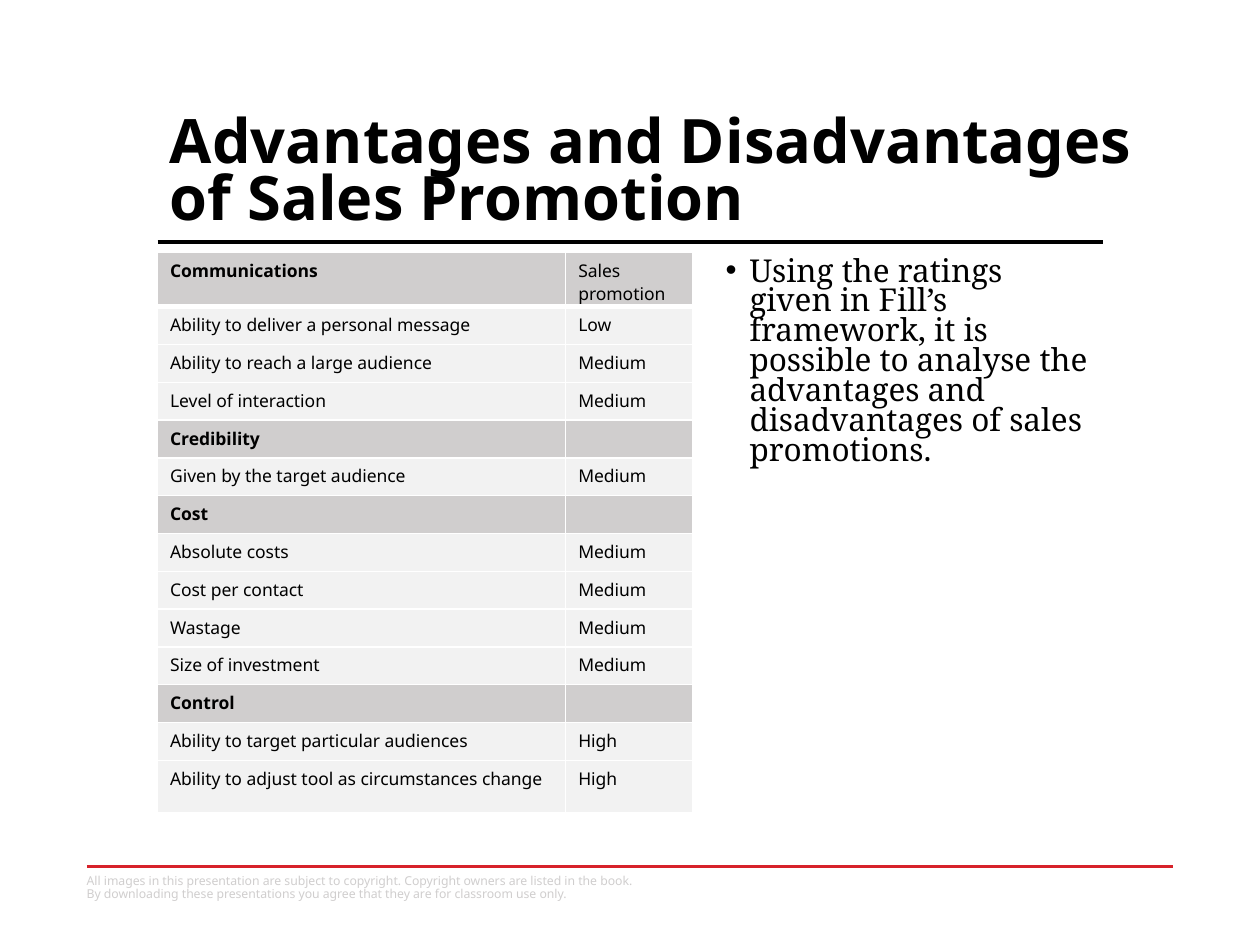
"""Build the slide on advantages and disadvantages of sales promotion."""
from dataclasses import dataclass

from lxml import etree
from pptx import Presentation
from pptx.dml.color import RGBColor
from pptx.enum.shapes import MSO_CONNECTOR
from pptx.enum.text import MSO_ANCHOR
from pptx.oxml.ns import qn
from pptx.util import Inches, Pt

STRAIGHT = MSO_CONNECTOR.STRAIGHT
TOP = MSO_ANCHOR.TOP
BOTTOM = MSO_ANCHOR.BOTTOM


@dataclass(frozen=True)
class Theme:
    sans: str = "Noto Sans"
    serif: str = "Noto Serif"
    ink: str = "000000"
    red: str = "D7222A"
    gray: str = "D0CECE"
    pale: str = "F2F2F2"
    white: str = "FFFFFF"
    title: float = 35
    body: float = 18
    cell: float = 10
    note: float = 7


@dataclass(frozen=True)
class Rule:
    left: float
    right: float
    top: float
    color: str
    width: float


@dataclass(frozen=True)
class Block:
    text: str
    box: tuple[float, float, float, float]
    face: str
    size: float
    color: str
    bold: bool = False
    anchor: MSO_ANCHOR = TOP
    pitch: float = 1.0
    bullet: str = ""


@dataclass(frozen=True)
class Row:
    label: str
    rate: str = ""
    head: bool = False
    height: float = 0.3


THEME = Theme()
RULES = (
    Rule(0.69, 9.31, 6.88, THEME.red, 1.75),
    Rule(1.25, 8.75, 1.92, THEME.ink, 2),
)
BODY = Block(
    "Using the ratings given in Fill’s framework, it is possible to analyse "
    "the advantages and disadvantages of sales promotions.",
    (5.66, 2, 3.09, 4.76), THEME.serif, THEME.body, THEME.ink,
    pitch=0.79, bullet="•")
TITLE = Block(
    "Advantages and Disadvantages of Sales Promotion",
    (1.25, 0.43, 7.88, 1.46), THEME.sans, THEME.title, THEME.ink,
    bold=True, anchor=BOTTOM, pitch=0.78)
NOTE = Block(
    "All images in this presentation are subject to copyright. "
    "Copyright owners are listed in the book.\v"
    "By downloading these presentations you agree that they are "
    "for classroom use only.",
    (0.59, 6.9, 5, 0.34), THEME.sans, THEME.note, THEME.gray, pitch=0.85)
SPOT = (1.25, 2, 4.25, 4.47)
COLS = (3.24, 1.01)
ROWS = (
    Row("Communications", "Sales promotion", True, 0.42),
    Row("Ability to deliver a personal message", "Low"),
    Row("Ability to reach a large audience", "Medium"),
    Row("Level of interaction", "Medium"),
    Row("Credibility", head=True),
    Row("Given by the target audience", "Medium"),
    Row("Cost", head=True),
    Row("Absolute costs", "Medium"),
    Row("Cost per contact", "Medium"),
    Row("Wastage", "Medium"),
    Row("Size of investment", "Medium"),
    Row("Control", head=True),
    Row("Ability to target particular audiences", "High"),
    Row("Ability to adjust tool as circumstances change", "High", height=0.42),
)


def style(para, face: str, size: float, color: str, bold: bool) -> None:
    """Set the type of a paragraph and its runs."""
    look = {"name": face, "size": Pt(size), "bold": bold}
    for font in [para.font] + [run.font for run in para.runs]:
        for key, value in look.items():
            setattr(font, key, value)
        font.color.rgb = RGBColor.from_string(color)


def draw_rule(slide, rule: Rule) -> None:
    """Draw one level line."""
    line = slide.shapes.add_connector(
        STRAIGHT, Inches(rule.left), Inches(rule.top),
        Inches(rule.right), Inches(rule.top))
    line.line.color.rgb = RGBColor.from_string(rule.color)
    line.line.width = Pt(rule.width)
    etree.SubElement(line._element.spPr, qn("a:effectLst"))


def draw_block(slide, block: Block) -> None:
    """Draw one text box."""
    frame = slide.shapes.add_textbox(*map(Inches, block.box)).text_frame
    for key, value in {"word_wrap": True, "vertical_anchor": block.anchor}.items():
        setattr(frame, key, value)
    para = frame.paragraphs[0]
    para.text = block.text
    para.line_spacing = block.pitch
    if block.bullet:
        props = para._p.get_or_add_pPr()
        props.set("marL", str(Inches(0.19)))
        props.set("indent", str(Inches(-0.19)))
        etree.SubElement(props, qn("a:buFont"), typeface="Arial")
        etree.SubElement(props, qn("a:buChar"), char=block.bullet)
    style(para, block.face, block.size, block.color, block.bold)


def edge(cell, first: bool) -> None:
    """Give a cell white borders, with a heavy one under the first row."""
    props = cell._tc.get_or_add_tcPr()
    widths = {"lnL": 1, "lnR": 1, "lnT": 1, "lnB": 3 if first else 1}
    for spot, (tag, width) in enumerate(widths.items()):
        line = etree.Element(qn(f"a:{tag}"), w=str(Pt(width)))
        fill = etree.SubElement(line, qn("a:solidFill"))
        etree.SubElement(fill, qn("a:srgbClr"), val=THEME.white)
        props.insert(spot, line)


def draw_table(slide) -> None:
    """Draw the ratings table."""
    table = slide.shapes.add_table(
        len(ROWS), len(COLS), *map(Inches, SPOT)).table
    for col, width in zip(table.columns, COLS):
        col.width = Inches(width)
    for i, row in enumerate(ROWS):
        table.rows[i].height = Inches(row.height)
        for j, text in enumerate((row.label, row.rate)):
            cell = table.cell(i, j)
            cell.fill.solid()
            cell.fill.fore_color.rgb = RGBColor.from_string(
                THEME.gray if row.head else THEME.pale)
            edge(cell, i == 0)
            para = cell.text_frame.paragraphs[0]
            para.text = text
            style(para, THEME.sans, THEME.cell, THEME.ink, row.head and j == 0)
            etree.SubElement(para._p, qn("a:endParaRPr"),
                             sz=str(int(THEME.cell * 100)))


def main() -> None:
    """Build and save the slide."""
    deck = Presentation()
    deck.slide_width, deck.slide_height = Inches(10), Inches(7.5)
    slide = deck.slides.add_slide(deck.slide_layouts[6])
    for rule in RULES:
        draw_rule(slide, rule)
    draw_block(slide, BODY)
    draw_block(slide, TITLE)
    draw_table(slide)
    draw_block(slide, NOTE)
    deck.save("out.pptx")


if __name__ == "__main__":
    main()
